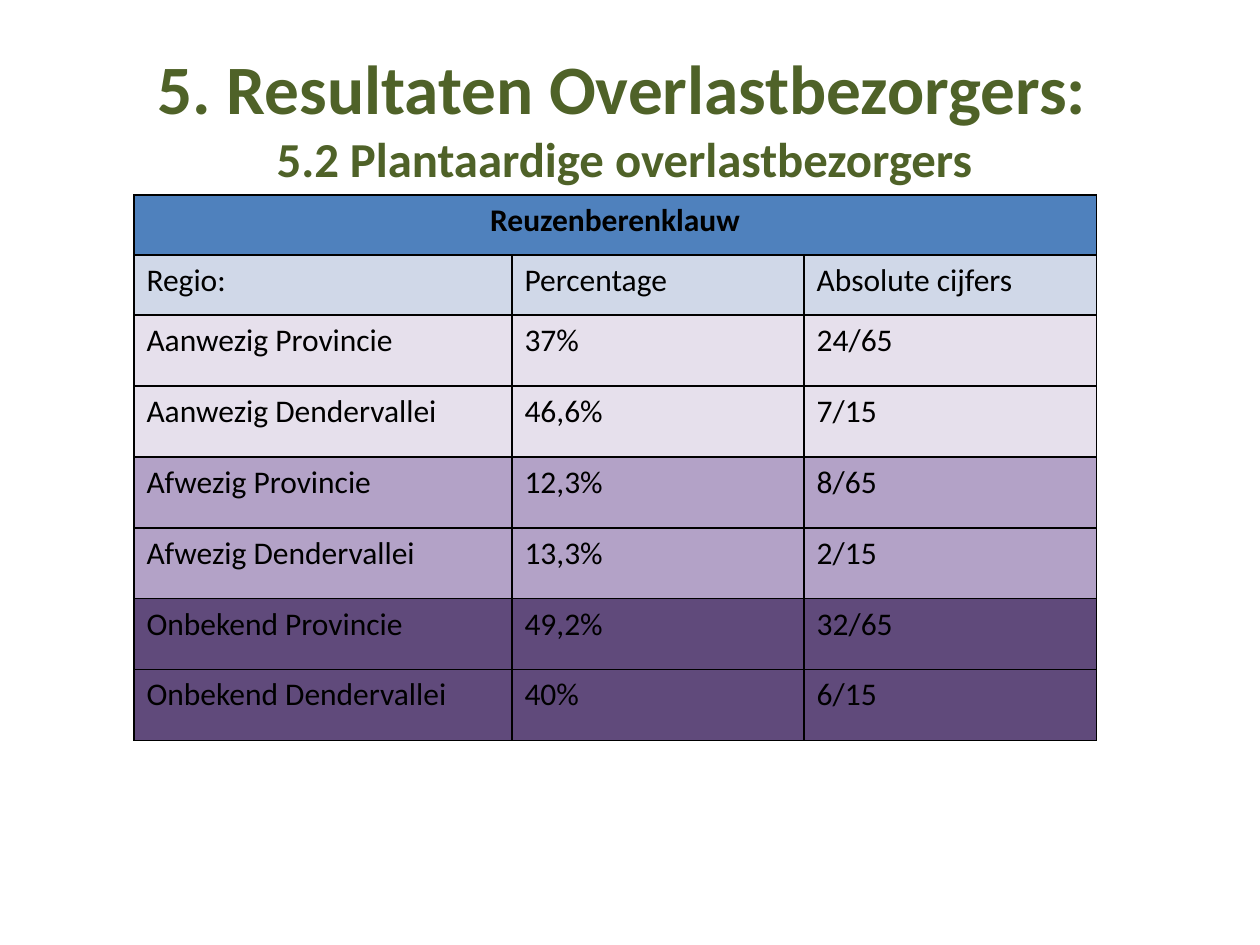
from dataclasses import dataclass

from lxml.etree import SubElement
from pptx import Presentation
from pptx.dml.color import RGBColor as RGB
from pptx.enum.text import MSO_ANCHOR as Anchor, PP_ALIGN as Align
from pptx.oxml.ns import qn
from pptx.util import Cm, Pt


@dataclass(frozen=True)
class Theme:
    font: str = "Calibri"
    title: str = "4F6228"
    text: str = "000000"
    border: str = "000000"
    banner: str = "4F81BD"
    header: str = "D0D8E8"
    present: str = "E6E0EC"
    absent: str = "B3A2C7"
    unknown: str = "604A7B"
    title_size: float = 39.6
    subtitle_size: float = 27.9
    table_size: float = 18


theme = Theme()


def set_font(r, size, color, bold):
    r.font.name = theme.font
    r.font.size = Pt(size)
    r.font.bold = bold
    r.font.color.rgb = RGB.from_string(color)


def add_borders(cell):
    """Draw a 1 pt line on all four sides; lines must precede the fill."""
    tc_pr = cell._tc.get_or_add_tcPr()
    for side in ("a:lnL", "a:lnR", "a:lnT", "a:lnB"):
        ln = SubElement(tc_pr, qn(side), w=str(Pt(1)))
        fill = SubElement(ln, qn("a:solidFill"))
        SubElement(fill, qn("a:srgbClr"), val=theme.border)


prs = Presentation()
prs.slide_width, prs.slide_height = Cm(25.4), Cm(19.05)
s = prs.slides.add_slide(prs.slide_layouts[6])

# Title
tf = s.shapes.add_textbox(Cm(1.27), Cm(0.76), Cm(22.86), Cm(3.18)).text_frame
tf.word_wrap = True
tf.vertical_anchor = Anchor.MIDDLE
p = tf.paragraphs[0]
p.text = "5. Resultaten Overlastbezorgers: \v5.2 Plantaardige overlastbezorgers "
p.alignment = Align.CENTER
for r, size in zip(p.runs, (theme.title_size, theme.subtitle_size)):
    set_font(r, size, theme.title, True)

# Table
rows = [
    (theme.banner, "Reuzenberenklauw", "", ""),
    (theme.header, "Regio:", "Percentage", "Absolute cijfers"),
    (theme.present, "Aanwezig Provincie", "37%", "24/65"),
    (theme.present, "Aanwezig Dendervallei", "46,6%", "7/15"),
    (theme.absent, "Afwezig Provincie", "12,3%", "8/65"),
    (theme.absent, "Afwezig Dendervallei", "13,3%", "2/15"),
    (theme.unknown, "Onbekend Provincie", "49,2%", "32/65"),
    (theme.unknown, "Onbekend Dendervallei", "40%", "6/15"),
]
col_widths = [Cm(7.62), Cm(5.89), Cm(5.89)]
row_heights = [Cm(1.21)] * 2 + [Cm(1.43)] * 6

table = s.shapes.add_table(len(rows), len(col_widths), Cm(2.7), Cm(3.93),
                           sum(col_widths), sum(row_heights)).table
for col, width in zip(table.columns, col_widths):
    col.width = width
for row, height in zip(table.rows, row_heights):
    row.height = height

for i, (color, *texts) in enumerate(rows):
    for j, text in enumerate(texts):
        cell = table.cell(i, j)
        add_borders(cell)
        cell.fill.solid()
        cell.fill.fore_color.rgb = RGB.from_string(color)
        p = cell.text_frame.paragraphs[0]
        p.text = text
        for r in p.runs:
            set_font(r, theme.table_size, theme.text, i == 0)

banner = table.cell(0, 0)
banner.merge(table.cell(0, 2))
banner.text_frame.paragraphs[0].alignment = Align.CENTER

prs.save("out.pptx")
